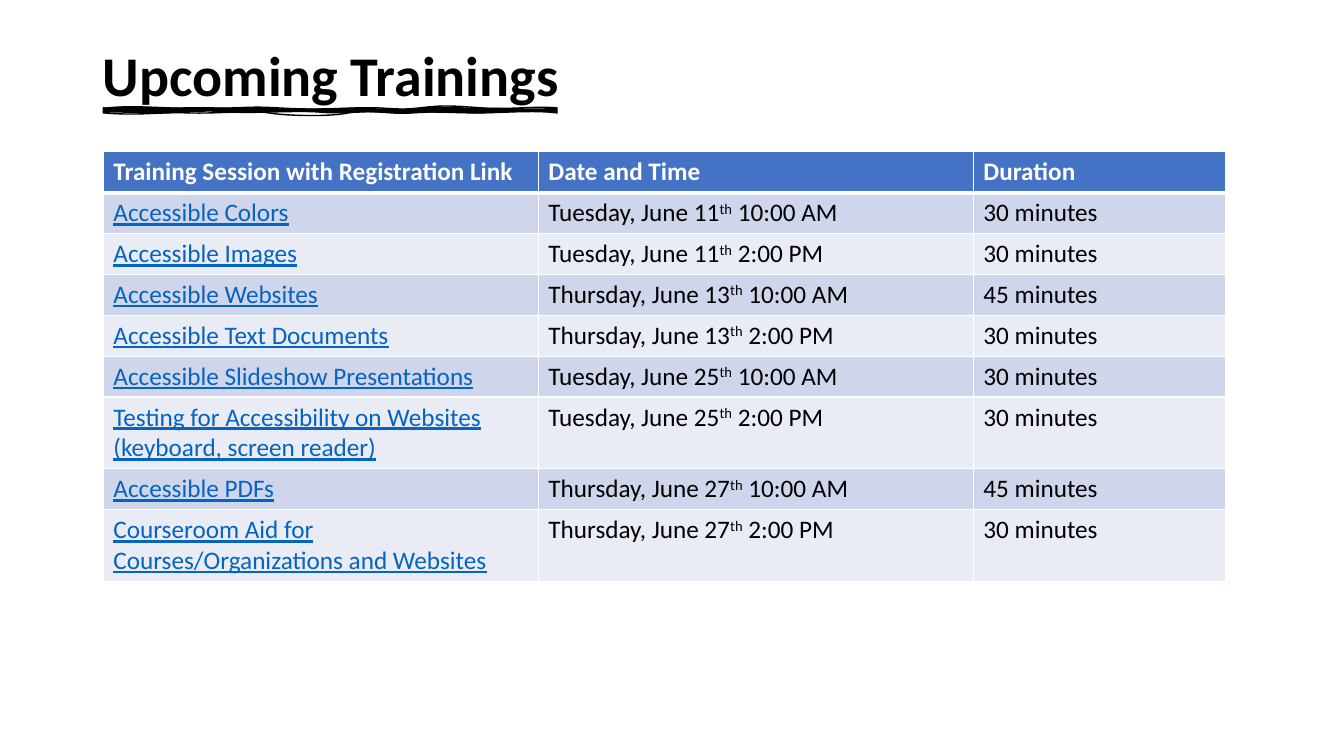
from dataclasses import dataclass

from lxml import etree
from pptx import Presentation
from pptx.dml.color import RGBColor
from pptx.enum.text import MSO_ANCHOR, PP_ALIGN
from pptx.oxml.ns import qn
from pptx.util import Inches, Pt

MIDDLE = MSO_ANCHOR.MIDDLE
LEFT = PP_ALIGN.LEFT

BLACK = RGBColor(0x00, 0x00, 0x00)
WHITE = RGBColor(0xFF, 0xFF, 0xFF)
BLUE = RGBColor(0x44, 0x72, 0xC4)
LINK = RGBColor(0x05, 0x63, 0xC1)
BANDS = (RGBColor(0xCF, 0xD5, 0xEA), RGBColor(0xE9, 0xEB, 0xF5))

FONT = "Calibri"
WIDTH, HEIGHT = Inches(13.33), Inches(7.5)
MARGIN = 7.69
COLS = (32.37, 32.37, 18.74)
ROW = 5.41
HEADS = ("Training Session with Registration Link", "Date and Time", "Duration")
EDGES = {"L": 1, "R": 1, "T": 1, "B": 3}


@dataclass(frozen=True)
class Session:
    name: str
    day: str
    hour: str
    span: str = "30 minutes"


SESSIONS = (
    Session("Accessible Colors", "Tuesday, June 11", "10:00 AM"),
    Session("Accessible Images", "Tuesday, June 11", "2:00 PM"),
    Session("Accessible Websites", "Thursday, June 13", "10:00 AM", "45 minutes"),
    Session("Accessible Text Documents", "Thursday, June 13", "2:00 PM"),
    Session("Accessible Slideshow Presentations", "Tuesday, June 25", "10:00 AM"),
    Session("Testing for Accessibility on Websites (keyboard, screen reader)",
            "Tuesday, June 25", "2:00 PM"),
    Session("Accessible PDFs", "Thursday, June 27", "10:00 AM", "45 minutes"),
    Session("Courseroom Aid for Courses/Organizations and Websites",
            "Thursday, June 27", "2:00 PM"),
)

# Each curve is two controls and an end, in 1/1333 of the slide's width.
UNIT = WIDTH / 1333
START = (0, 5)
OUTLINE = (
    (37, 8, 53, 4, 84, 5), (115, 6, 146, 2, 164, 5),
    (182, 8, 225, 9, 243, 5), (261, 1, 288, 7, 305, 5),
    (322, 3, 345, 5, 371, 5), (397, 5, 425, 2, 450, 5),
    (450, 4, 450, 2, 450, 0), (428, -2, 403, 2, 375, 0),
    (347, -2, 338, -3, 314, 0), (290, 3, 283, -1, 252, 0),
    (222, 1, 207, 2, 173, 0), (142, -2, 136, 1, 107, 0),
    (77, -1, 35, 3, 0, 0), (0, 2, 0, 3, 0, 5),
)
BODY = (
    (31, 4, 36, 7, 71, 5), (106, 3, 117, 4, 132, 5),
    (148, 6, 196, 3, 216, 5), (236, 7, 263, 3, 287, 5),
    (311, 7, 328, 3, 357, 5), (387, 7, 422, 1, 450, 5),
    (450, 3, 450, 1, 450, 0), (434, 1, 397, 0, 375, 0),
    (354, 0, 338, -3, 314, 0), (290, 3, 268, -1, 239, 0),
    (209, 1, 184, 1, 164, 0), (143, -1, 125, 0, 93, 0),
    (62, 0, 23, -4, 0, 0), (0, 2, 0, 4, 0, 5),
)


def across(share: float) -> int:
    """Length from a percentage of the slide's width."""
    return round(WIDTH * share / 100)


def down(share: float) -> int:
    """Length from a percentage of the slide's height."""
    return round(HEIGHT * share / 100)


def write(frame, text: str, *, size=18, color=BLACK, bold=False,
          under=False, base=0) -> None:
    """Add one run to the frame's first paragraph; base raises it, in percent."""
    part = frame.paragraphs[0]
    part.alignment = LEFT
    run = part.add_run()
    run.text = text
    font = run.font
    font.name, font.size, font.bold, font.underline = FONT, Pt(size), bold, under
    font.color.rgb = color
    if base:
        run._r.get_or_add_rPr().set("baseline", str(base * 1000))


def edge(cell, side: str, width: float) -> None:
    line = etree.SubElement(cell._tc.get_or_add_tcPr(), qn(f"a:ln{side}"),
                            w=str(Pt(width)))
    fill = etree.SubElement(line, qn("a:solidFill"))
    etree.SubElement(fill, qn("a:srgbClr"), val=str(WHITE))


def paint(cell, row: int) -> None:
    """Set the cell's header or band fill, and the header's borders."""
    if row == 0:
        for side, width in EDGES.items():
            edge(cell, side, width)
    cell.fill.solid()
    cell.fill.fore_color.rgb = BANDS[(row - 1) % 2] if row else BLUE


def bend(shape) -> None:
    """Turn the straight segments into curves, and stroke only the outline."""
    first = next(shape._element.iter(qn("a:path")))
    for line, curve in zip(list(first.iter(qn("a:lnTo"))), OUTLINE + BODY):
        line.tag = qn("a:cubicBezTo")
        for spot in (0, 1):
            x, y = curve[2 * spot:2 * spot + 2]
            line.insert(spot, etree.Element(qn("a:pt"), x=str(x), y=str(y)))
    parts = list(first)
    second = etree.SubElement(first.getparent(), qn("a:path"),
                              dict(first.attrib), stroke="0")
    second.extend(parts[len(parts) // 2:])
    first.set("fill", "none")


def add_title(slide) -> None:
    title = slide.shapes.title
    title.left, title.top = across(6.9), down(0.74)
    title.width, title.height = across(86.87), down(19.33)
    frame = title.text_frame
    frame.vertical_anchor = MIDDLE
    frame.paragraphs[0].line_spacing = 0.9
    write(frame, "Upcoming Trainings", size=40, bold=True)


def add_stroke(slide) -> None:
    path = slide.shapes.build_freeform(*START, scale=UNIT)
    path.add_line_segments([curve[4:] for curve in OUTLINE], close=True)
    path.move_to(*START)
    path.add_line_segments([curve[4:] for curve in BODY], close=True)
    shape = path.convert_to_shape(across(MARGIN), down(14.27))
    bend(shape)
    shape.shadow.inherit = False
    shape.fill.solid()
    shape.fill.fore_color.rgb = BLACK
    shape.line.color.rgb = BLACK
    shape.line.width = Pt(1)


def add_sessions(slide) -> None:
    rows = len(SESSIONS) + 1
    frame = slide.shapes.add_table(
        rows, len(COLS), across(MARGIN), down(20.08),
        across(sum(COLS)), down(ROW * rows))
    table = frame.table
    for col, share in zip(table.columns, COLS):
        col.width = across(share)
    for index, row in enumerate(table.rows):
        row.height = down(ROW)
        for cell in row.cells:
            paint(cell, index)
    frame.height = down(56.53)
    for col, head in enumerate(HEADS):
        write(table.cell(0, col).text_frame, head, color=WHITE, bold=True)
    for index, item in enumerate(SESSIONS, 1):
        name, date, span = (cell.text_frame for cell in table.rows[index].cells)
        write(name, item.name, color=LINK, under=True)
        write(date, item.day)
        write(date, "th", base=30)
        write(date, f" {item.hour}")
        write(span, item.span)


def main() -> None:
    deck = Presentation()
    deck.slide_width, deck.slide_height = WIDTH, HEIGHT
    slide = deck.slides.add_slide(deck.slide_layouts[5])
    add_title(slide)
    add_stroke(slide)
    add_sessions(slide)
    deck.save("out.pptx")


if __name__ == "__main__":
    main()
